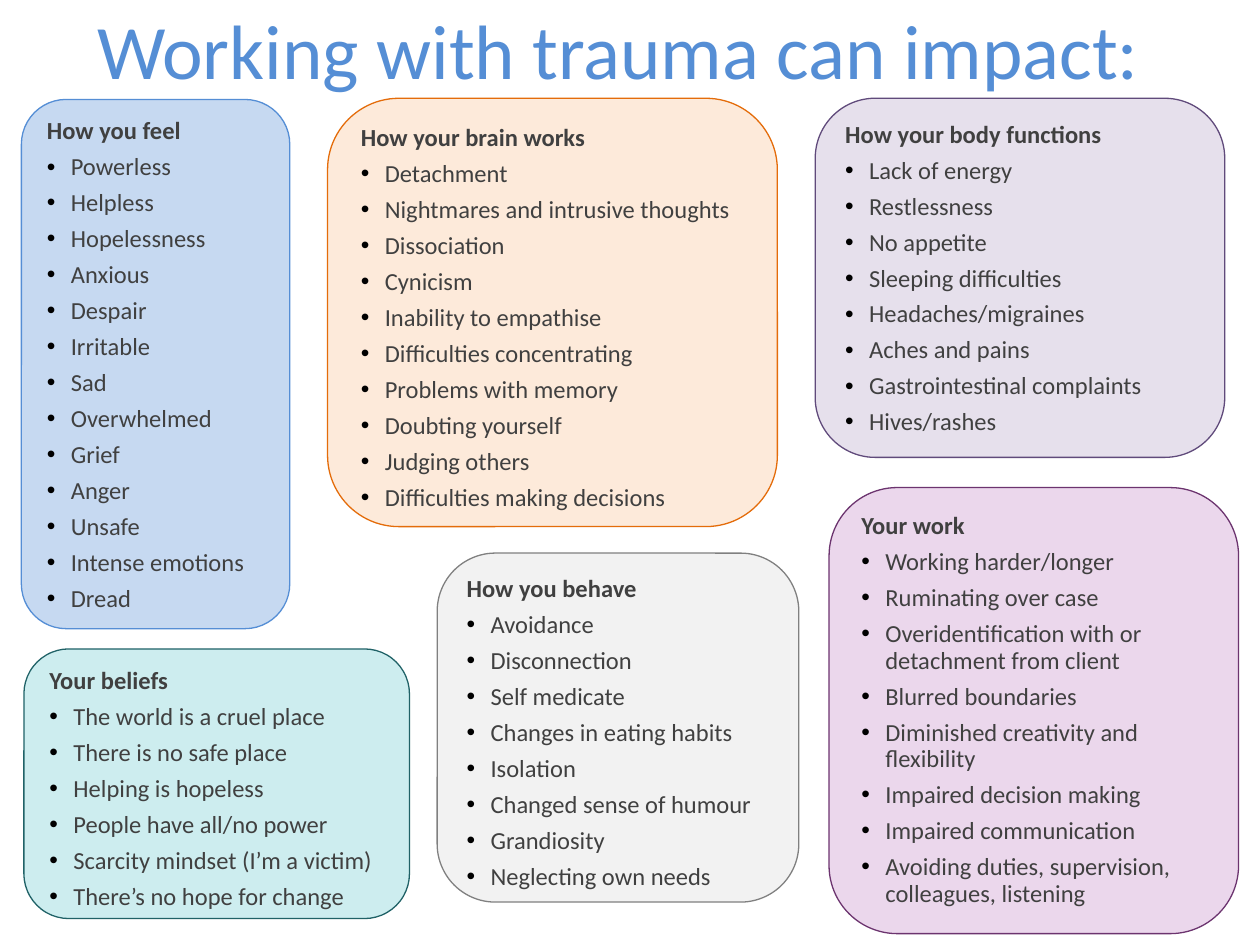
from lxml.etree import SubElement
from pptx import Presentation
from pptx.dml.color import RGBColor
from pptx.enum.shapes import MSO_SHAPE
from pptx.enum.text import MSO_ANCHOR, PP_ALIGN
from pptx.oxml.ns import qn
from pptx.util import Inches, Pt

SLIDE_WIDTH, SLIDE_HEIGHT = Inches(10), Inches(7.5)
BULLET_INDENT = Inches(0.19)

COLORS = {
    "title": "558ED5",
    "text": "404040",
    "bullet": "000000",
    "behave": ("F2F2F2", "808080"),
    "body": ("E6E0EC", "604A7B"),
    "feel": ("C6D9F1", "558ED5"),
    "brain": ("FDEADA", "E46C0A"),
    "beliefs": ("CDEDEF", "206267"),
    "work": ("EBD7EC", "6C346F"),
}

TITLE_BOX = (4.1, 0, 90, 10.4)

# Boxes are left, top, width and height in percent of the slide.
CARDS = [
    ("behave", (34.7, 58.53, 28.7, 36.93), "How you behave", [
        "Avoidance", "Disconnection", "Self medicate", "Changes in eating habits",
        "Isolation", "Changed sense of humour", "Grandiosity", "Neglecting own needs"]),
    ("body", (64.7, 10.4, 32.5, 38), "How your body functions", [
        "Lack of energy", "Restlessness", "No appetite", "Sleeping difficulties",
        "Headaches/migraines", "Aches and pains", "Gastrointestinal complaints",
        "Hives/rashes"]),
    ("feel", (1.7, 10.53, 21.3, 56), "How you feel", [
        "Powerless", "Helpless", "Hopelessness", "Anxious", "Despair", "Irritable",
        "Sad", "Overwhelmed", "Grief", "Anger", "Unsafe", "Intense emotions", "Dread"]),
    ("brain", (26, 10.4, 35.7, 45.33), "How your brain works", [
        "Detachment", "Nightmares and intrusive thoughts", "Dissociation", "Cynicism",
        "Inability to empathise", "Difficulties concentrating", "Problems with memory",
        "Doubting yourself", "Judging others", "Difficulties making decisions"]),
    ("beliefs", (1.9, 68.67, 30.6, 28.53), "Your beliefs", [
        "The world is a cruel place", "There is no safe place", "Helping is hopeless",
        "People have all/no power", "Scarcity mindset (I’m a victim)",
        "There’s no hope for change"]),
    ("work", (65.8, 51.6, 32.5, 47.2), "Your work", [
        "Working harder/longer", "Ruminating over case",
        "Overidentification with or detachment from client", "Blurred boundaries",
        "Diminished creativity and flexibility", "Impaired decision making",
        "Impaired communication", "Avoiding duties, supervision, colleagues, listening"]),
]


def set_attributes(target, values):
    for name, value in values.items():
        setattr(target, name, value)


def place(box):
    sizes = (SLIDE_WIDTH, SLIDE_HEIGHT) * 2
    return [round(size * share / 100) for size, share in zip(sizes, box)]


def write(paragraph, text, size, color, bold=False):
    run = paragraph.add_run()
    run.text = text
    set_attributes(run.font, {"name": "Calibri", "size": Pt(size), "bold": bold})
    run.font.color.rgb = RGBColor.from_string(color)


def add_bullet(paragraph):
    properties = paragraph._p.get_or_add_pPr()
    properties.set("marL", str(BULLET_INDENT))
    properties.set("indent", str(-BULLET_INDENT))
    color = SubElement(properties, qn("a:buClr"))
    SubElement(color, qn("a:srgbClr"), val=COLORS["bullet"])
    SubElement(properties, qn("a:buFont"), typeface="Arial")
    SubElement(properties, qn("a:buChar"), char="•")


def add_title(slide, box, text):
    frame = slide.shapes.add_textbox(*place(box)).text_frame
    set_attributes(frame, {"word_wrap": True, "vertical_anchor": MSO_ANCHOR.MIDDLE})
    paragraph = frame.paragraphs[0]
    paragraph.alignment = PP_ALIGN.CENTER
    write(paragraph, text, 44, COLORS["title"])


def add_card(slide, box, colors, heading, items):
    shape = slide.shapes.add_shape(MSO_SHAPE.ROUNDED_RECTANGLE, *place(box))
    shape.shadow.inherit = False
    fill, line = map(RGBColor.from_string, colors)
    shape.fill.solid()
    shape.fill.fore_color.rgb = fill
    shape.line.color.rgb = line
    shape.line.width = Pt(0.75)
    frame = shape.text_frame
    set_attributes(frame, {"word_wrap": True, "vertical_anchor": MSO_ANCHOR.TOP})
    for index, text in enumerate([heading, *items]):
        paragraph = frame.add_paragraph() if index else frame.paragraphs[0]
        set_attributes(paragraph, {
            "alignment": PP_ALIGN.LEFT, "line_spacing": 0.9, "space_before": Pt(5.4)})
        if index:
            add_bullet(paragraph)
        write(paragraph, text, 14, COLORS["text"], bold=index == 0)


def main():
    presentation = Presentation()
    set_attributes(presentation, {"slide_width": SLIDE_WIDTH, "slide_height": SLIDE_HEIGHT})
    slide = presentation.slides.add_slide(presentation.slide_layouts[6])
    add_title(slide, TITLE_BOX, "Working with trauma can impact:")
    for key, box, heading, items in CARDS:
        add_card(slide, box, COLORS[key], heading, items)
    presentation.save("out.pptx")


if __name__ == "__main__":
    main()
